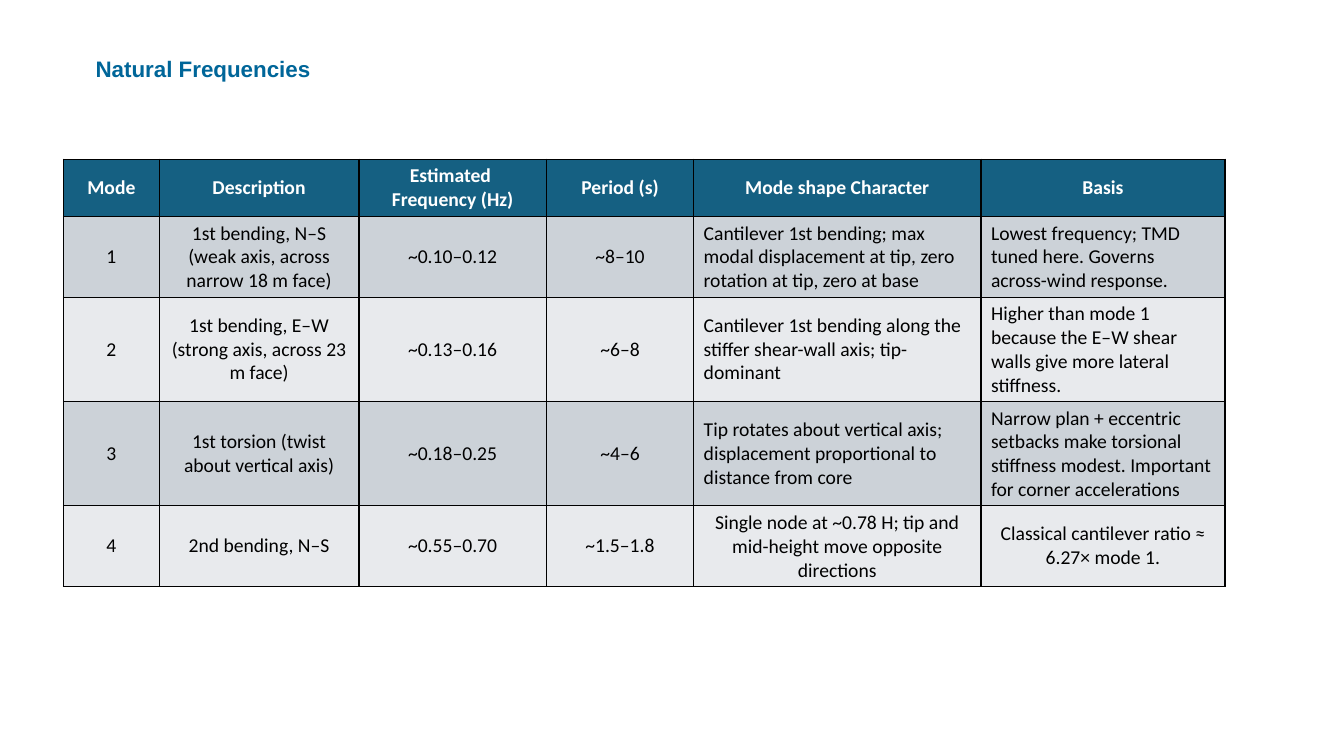
from dataclasses import dataclass

from lxml.etree import SubElement
from pptx import Presentation
from pptx.dml.color import RGBColor
from pptx.enum.text import MSO_VERTICAL_ANCHOR as Anchor, PP_PARAGRAPH_ALIGNMENT as Align
from pptx.oxml.ns import qn
from pptx.slide import Slide
from pptx.table import _Cell as Cell
from pptx.text.text import _Paragraph as Para
from pptx.util import Pt

PX = 9144
BLUE = RGBColor(0x00, 0x66, 0x99)
TEAL = RGBColor(0x15, 0x60, 0x82)
DARK = RGBColor(0xCC, 0xD2, 0xD8)
LIGHT = RGBColor(0xE8, 0xEA, 0xED)
WHITE = RGBColor(0xFF, 0xFF, 0xFF)
BLACK = RGBColor(0x00, 0x00, 0x00)


@dataclass(frozen=True)
class Font:
    name: str
    size: int
    color: RGBColor
    bold: bool = False


@dataclass(frozen=True)
class Row:
    texts: tuple[str, ...]
    fill: RGBColor
    font: Font
    notes: Align = Align.LEFT


TITLE = Font("Arial", 16, BLUE, True)
HEAD = Font("Calibri", 14, WHITE, True)
BODY = Font("Calibri", 14, BLACK)
WIDTHS = (95, 198, 186, 146, 285, 242)
HEIGHT = 41
NOTES = 4
ROWS = (
    Row(("Mode", "Description", "Estimated \nFrequency (Hz)", "Period (s)",
         "Mode shape Character", "Basis"), TEAL, HEAD, Align.CENTER),
    Row(("1", "1st bending, N–S (weak axis, across narrow 18 m face)",
         "~0.10–0.12", "~8–10",
         "Cantilever 1st bending; max modal displacement at tip, "
         "zero rotation at tip, zero at base",
         "Lowest frequency; TMD tuned here. Governs across-wind response."), DARK, BODY),
    Row(("2", "1st bending, E–W (strong axis, across 23 m face)",
         "~0.13–0.16", "~6–8",
         "Cantilever 1st bending along the stiffer shear-wall axis; tip-dominant",
         "Higher than mode 1 because the E–W shear walls give more "
         "lateral stiffness."), LIGHT, BODY),
    Row(("3", "1st torsion (twist about vertical axis)",
         "~0.18–0.25", "~4–6",
         "Tip rotates about vertical axis; displacement proportional to "
         "distance from core",
         "Narrow plan + eccentric setbacks make torsional stiffness modest. "
         "Important for corner accelerations"), DARK, BODY),
    Row(("4", "2nd bending, N–S", "~0.55–0.70", "~1.5–1.8",
         "Single node at ~0.78 H; tip and mid-height move opposite directions",
         "Classical cantilever ratio ≈ 6.27× mode 1."), LIGHT, BODY, Align.CENTER),
)


def write(para: Para, text: str, font: Font) -> None:
    """Add the lines of a text to a paragraph as styled runs."""
    for i, line in enumerate(text.split("\n")):
        if i:
            para.add_line_break()
        run = para.add_run()
        run.text = line
        run.font.name = font.name
        run.font.size = Pt(font.size)
        run.font.bold = font.bold
        run.font.color.rgb = font.color


def border(cell: Cell) -> None:
    """Rule all four sides of a cell in black."""
    props = cell._tc.get_or_add_tcPr()
    for side in ("a:lnL", "a:lnR", "a:lnT", "a:lnB"):
        line = SubElement(props, qn(side), w=str(Pt(1)))
        fill = SubElement(line, qn("a:solidFill"))
        SubElement(fill, qn("a:srgbClr"), val=str(BLACK))


def draw_title(slide: Slide) -> None:
    """Place the slide heading."""
    box = slide.shapes.add_textbox(85 * PX, 50 * PX, 1131 * PX, 62 * PX)
    box.text_frame.word_wrap = True
    para = box.text_frame.paragraphs[0]
    para.space_after = Pt(6)
    write(para, "Natural Frequencies", TITLE)


def draw_table(slide: Slide) -> None:
    """Place the table of vibration modes."""
    table = slide.shapes.add_table(
        len(ROWS), len(WIDTHS), 63 * PX, 158 * PX,
        sum(WIDTHS) * PX, len(ROWS) * HEIGHT * PX).table
    for col, width in zip(table.columns, WIDTHS):
        col.width = width * PX
    for r, row in enumerate(ROWS):
        table.rows[r].height = HEIGHT * PX
        for c, text in enumerate(row.texts):
            cell = table.cell(r, c)
            border(cell)
            cell.fill.solid()
            cell.fill.fore_color.rgb = row.fill
            cell.vertical_anchor = Anchor.MIDDLE
            para = cell.text_frame.paragraphs[0]
            para.alignment = row.notes if c >= NOTES else Align.CENTER
            write(para, text, row.font)


def main() -> None:
    """Build and save the slide."""
    deck = Presentation()
    deck.slide_width = 1333 * PX
    deck.slide_height = 750 * PX
    slide = deck.slides.add_slide(deck.slide_layouts[6])
    draw_title(slide)
    draw_table(slide)
    deck.save("out.pptx")


if __name__ == "__main__":
    main()
